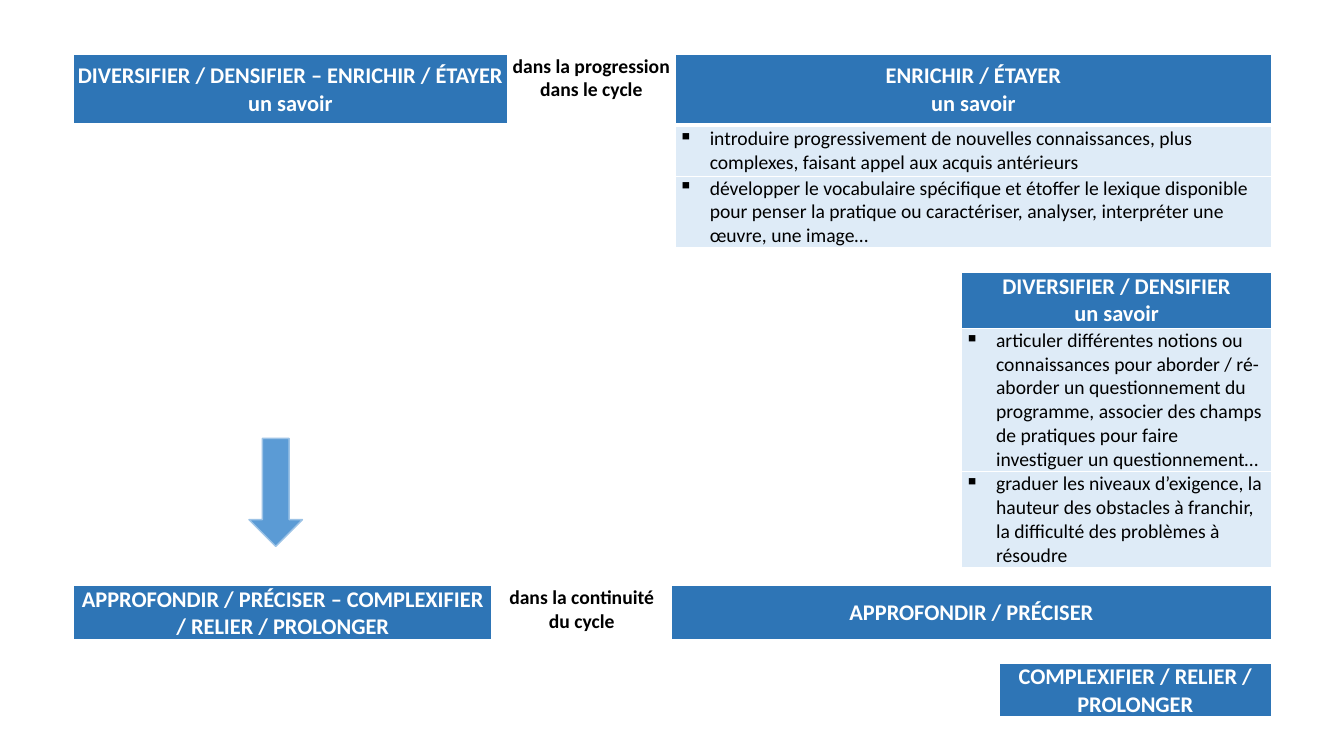
from lxml import etree
from pptx import Presentation
from pptx import util as u
from pptx.dml.color import RGBColor
from pptx.enum import shapes, text
from pptx.oxml.ns import qn

BLUE, PALE, WHITE, BLACK = "2E75B6", "DEEBF7", "FFFFFF", "000000"
LEFT, WIDTH = 0.73, 11.88

# Cell styles: fill, text colour, size, bold, centred, vertical anchor
STYLES = {
    "head": (BLUE, WHITE, 16, True, True, text.MSO_ANCHOR.MIDDLE),
    "link": (WHITE, BLACK, 14, True, True, text.MSO_ANCHOR.TOP),
    "item": (PALE, BLACK, 14, False, False, text.MSO_ANCHOR.MIDDLE),
}

# Each cell: row, column, rows spanned, columns spanned, style, text
CYCLE_CELLS = [
    (0, 0, 1, 1, "head", "DIVERSIFIER / DENSIFIER – ENRICHIR / ÉTAYER\nun savoir"),
    (0, 1, 7, 1, "link", "dans la progression dans le cycle"),
    (0, 2, 1, 3, "head", "ENRICHIR / ÉTAYER\nun savoir"),
    (1, 0, 6, 1, None, ""),
    (1, 2, 1, 3, "item", "introduire progressivement de nouvelles connaissances, plus "
     "complexes, faisant appel aux acquis antérieurs"),
    (2, 2, 1, 3, "item", "développer le vocabulaire spécifique et étoffer le lexique "
     "disponible pour penser la pratique ou caractériser, analyser, interpréter une "
     "œuvre, une image…"),
    (3, 2, 1, 3, None, ""),
    (4, 2, 3, 1, None, ""),
    (4, 3, 3, 1, None, ""),
    (4, 4, 1, 1, "head", "DIVERSIFIER / DENSIFIER\nun savoir"),
    (5, 4, 1, 1, "item", "articuler différentes notions ou connaissances pour aborder / "
     "ré-aborder un questionnement du programme, associer des champs de pratiques pour "
     "faire investiguer un questionnement…"),
    (6, 4, 1, 1, "item", "graduer les niveaux d’exigence, la hauteur des obstacles à "
     "franchir, la difficulté des problèmes à résoudre"),
]
CONTINUITY_CELLS = [
    (0, 0, 1, 1, "head", "APPROFONDIR / PRÉCISER – COMPLEXIFIER / RELIER / PROLONGER"),
    (0, 1, 1, 1, "link", "dans la continuité du cycle"),
    (0, 2, 1, 1, "head", "APPROFONDIR / PRÉCISER"),
]
EXTENSION_CELLS = [(0, 0, 1, 1, "head", "COMPLEXIFIER / RELIER / PROLONGER")]

# Each table: top, column widths, row heights, side inset, cells
TABLES = [
    (0.54, [4.3, 1.67, 2.68, 0.16, 3.07], [0.7, 0.51, 0.7, 0.24, 0.56, 1.41, 0.95],
     0.03, CYCLE_CELLS),
    (5.81, [4.15, 1.78, 5.95], [0.54], 0.07, CONTINUITY_CELLS),
    (6.58, [2.7], [0.53], 0.07, EXTENSION_CELLS),
]


def colour(value):
    return RGBColor.from_string(value)


def add_borders(cell, bottom):
    properties = cell._tc.get_or_add_tcPr()
    for side, width in (("L", 1), ("R", 1), ("T", 1), ("B", bottom)):
        line = etree.SubElement(properties, qn(f"a:ln{side}"), w=str(u.Pt(width)))
        fill = etree.SubElement(line, qn("a:solidFill"))
        etree.SubElement(fill, qn("a:srgbClr"), val=WHITE)


def add_bullet(para):
    properties = para._p.get_or_add_pPr()
    properties.set("marL", str(u.Inches(0.31)))
    properties.set("indent", str(u.Inches(-0.31)))
    etree.SubElement(properties, qn("a:buChar"), char="▪")


def write_cell(cell, style, words):
    fill, ink, size, bold, centred, anchor = STYLES[style]
    cell.fill.fore_color.rgb = colour(fill)
    cell.vertical_anchor = anchor
    cell.text_frame.text = words
    for para in cell.text_frame.paragraphs:
        if centred:
            para.alignment = text.PP_ALIGN.CENTER
        else:
            add_bullet(para)
        for span in para.runs:
            span.font.name, span.font.size, span.font.bold = "Calibri", u.Pt(size), bold
            span.font.color.rgb = colour(ink)


def add_grid(page, top, widths, heights, inset, cells):
    left = LEFT + WIDTH - sum(widths)  # every table ends at the right margin
    table = page.shapes.add_table(
        len(heights), len(widths), u.Inches(left), u.Inches(top),
        u.Inches(sum(widths)), u.Inches(sum(heights))).table
    table.first_row = table.horz_banding = False
    for column, width in zip(table.columns, widths):
        column.width = u.Inches(width)
    for row, height in zip(table.rows, heights):
        row.height = u.Inches(height)

    # Plain white cells with small empty lines
    for number, row in enumerate(table.rows):
        for cell in row.cells:
            add_borders(cell, 1 if number else 3)
            cell.fill.solid()
            cell.fill.fore_color.rgb = colour(WHITE)
            cell.margin_left = cell.margin_right = u.Inches(inset)
            cell.margin_top = cell.margin_bottom = 0
            para = cell.text_frame.paragraphs[0]
            etree.SubElement(para._p, qn("a:endParaRPr"), sz="800")

    # Merged areas and wording
    for row, column, down, across, style, words in cells:
        cell = table.cell(row, column)
        if down * across > 1:
            cell.merge(table.cell(row + down - 1, column + across - 1))
        if style:
            write_cell(cell, style, words)


def main():
    deck = Presentation()
    deck.slide_width, deck.slide_height = u.Inches(13.33), u.Inches(7.5)
    page = deck.slides.add_slide(deck.slide_layouts[6])
    for table in TABLES:
        add_grid(page, *table)

    # Arrow from the first stage to the next
    arrow = page.shapes.add_shape(
        shapes.MSO_SHAPE.DOWN_ARROW,
        u.Inches(2.47), u.Inches(4.35), u.Inches(0.53), u.Inches(1.07))
    arrow.shadow.inherit = False
    arrow.fill.solid()
    arrow.fill.fore_color.rgb = colour("5B9BD5")
    arrow.line.color.rgb = colour("9DC3E6")
    arrow.line.width = u.Pt(1)

    deck.save("out.pptx")


if __name__ == "__main__":
    main()
